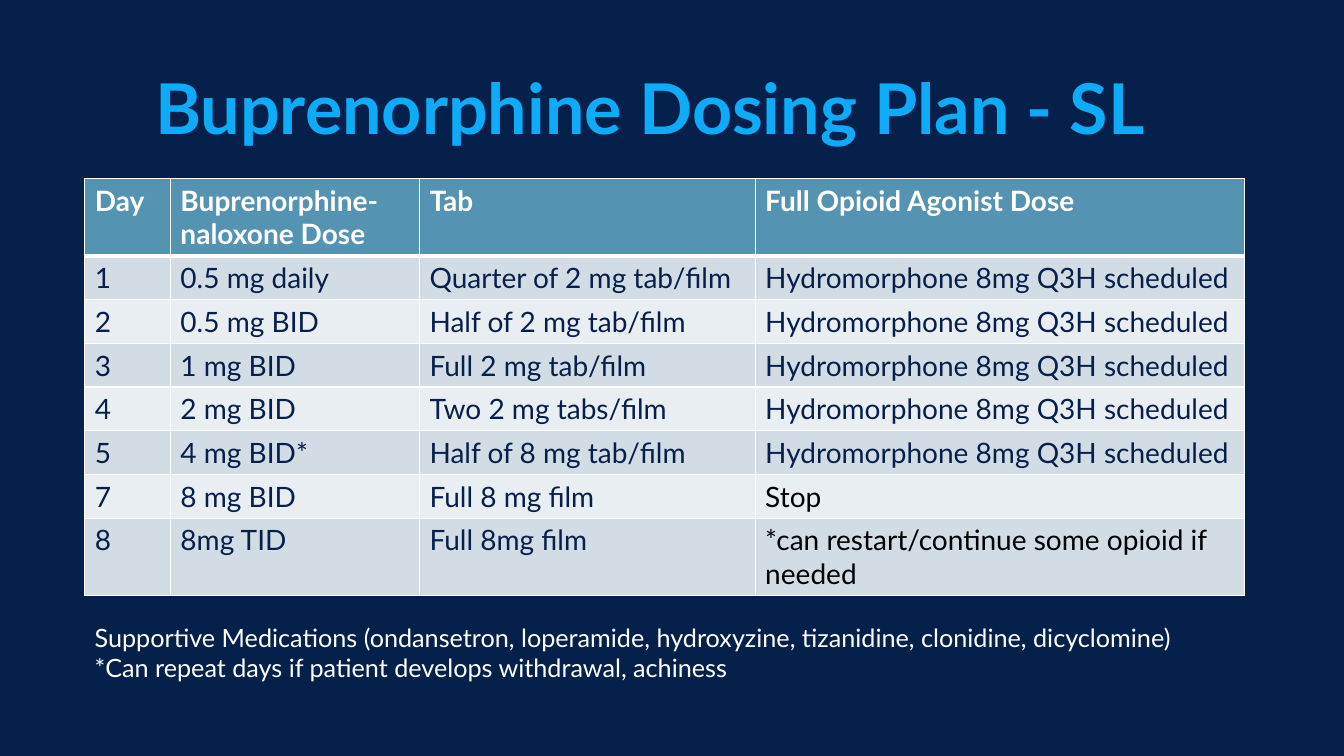
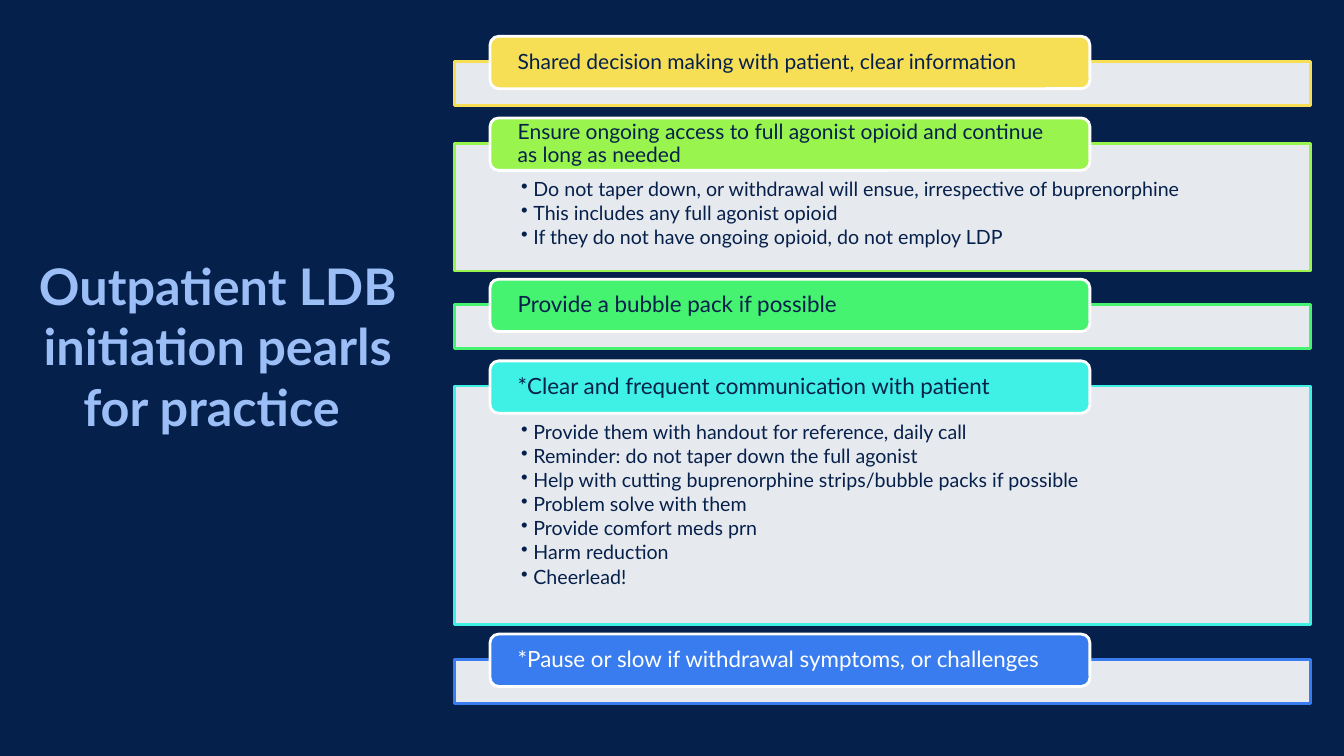
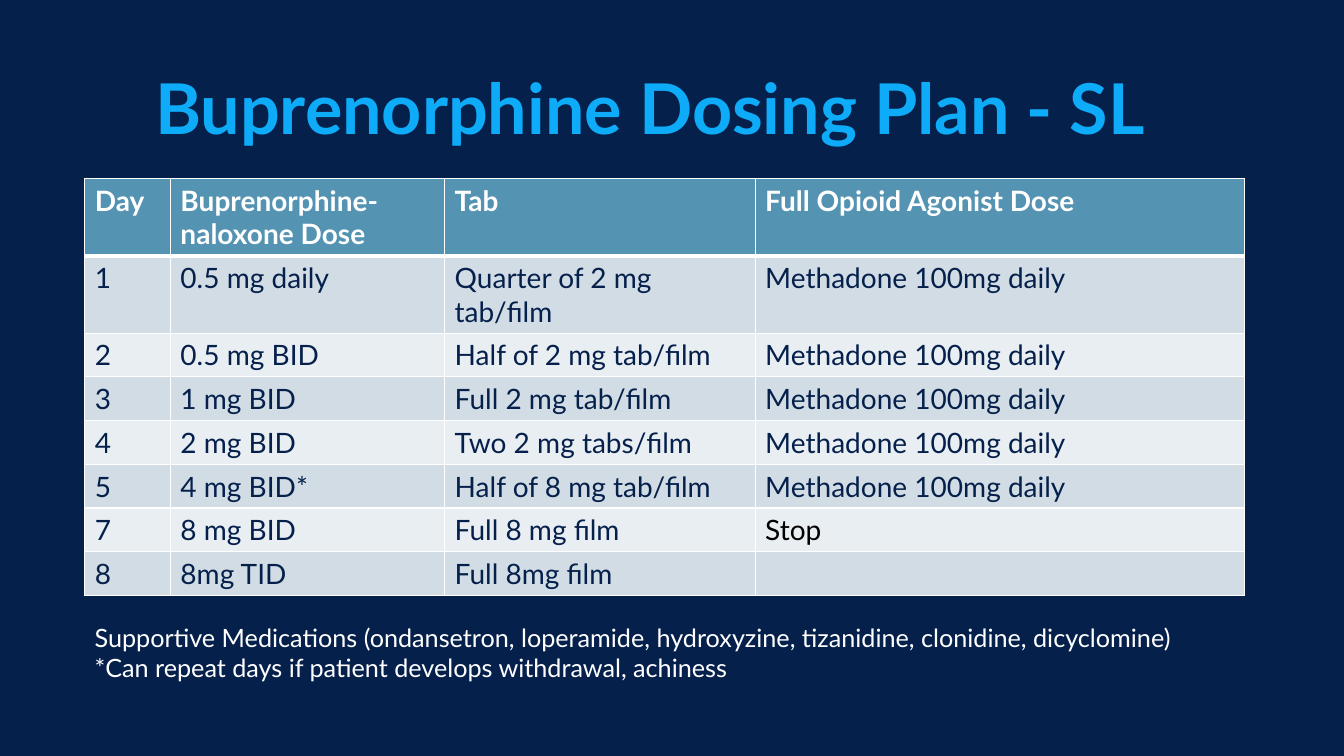
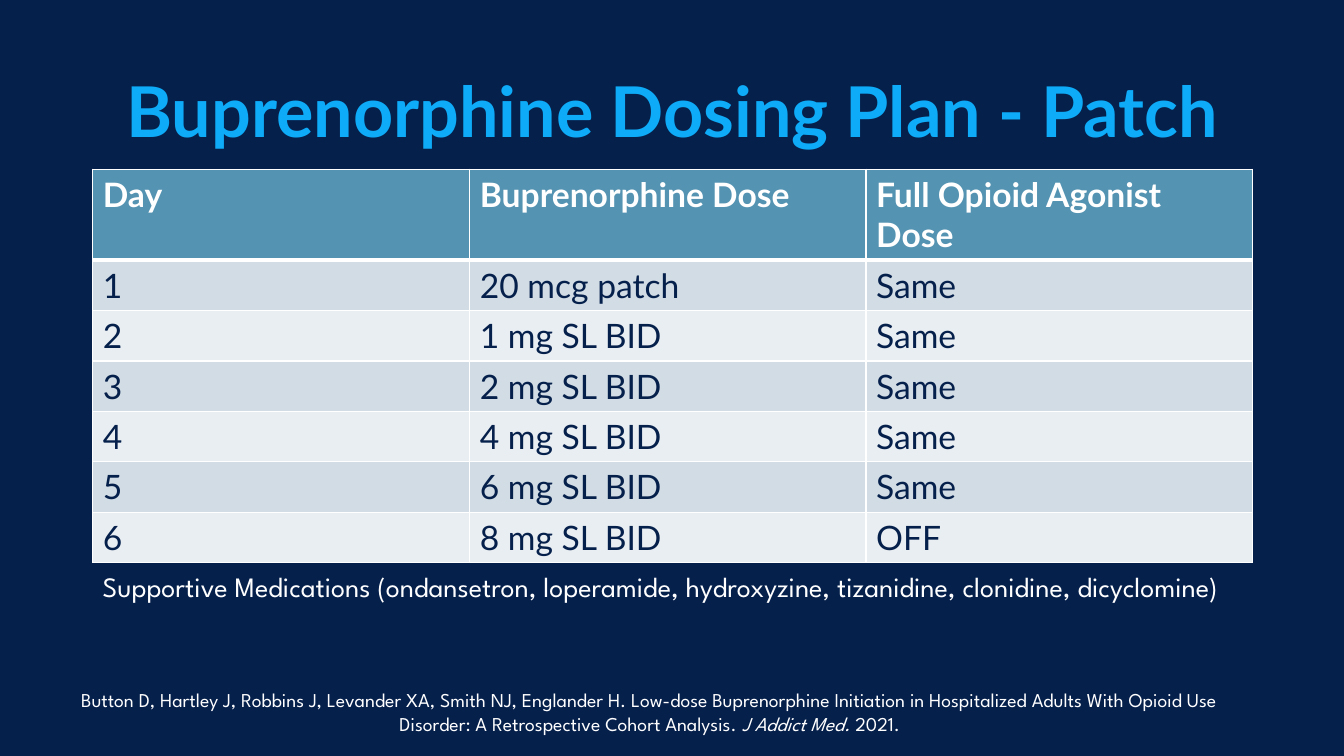
from lxml.etree import SubElement
from pptx import Presentation
from pptx.dml.color import RGBColor
from pptx.enum.shapes import MSO_SHAPE as Shape
from pptx.enum.text import MSO_ANCHOR as Anchor, PP_ALIGN as Align
from pptx.oxml import parse_xml
from pptx.oxml.ns import nsdecls, qn
from pptx.util import Emu, Pt

EMU_PER_PX = 9144  # 100 px to the inch

NAVY, WHITE, BLACK = "06204C", "FFFFFF", "000000"
SKY, PERIWINKLE = "0DABF8", "9CBEF7"
HEADER, BANDS = "5493B2", ("D1DCE4", "E9EEF2")
BODY_FONT, NOTE_FONT = "Lato", "League Spartan"


def px(length):
    return Emu(length * EMU_PER_PX)


def color(value):
    return RGBColor.from_string(value)


class Deck:
    """Holds the shared style and the current page."""

    def __init__(self):
        self.deck = Presentation()
        self.deck.slide_width, self.deck.slide_height = px(1333), px(750)
        self.page = None

    def new_page(self):
        self.page = self.deck.slides.add_slide(self.deck.slide_layouts[6])
        fill = self.page.background.fill
        fill.solid()
        fill.fore_color.rgb = color(NAVY)

    def add_span(self, para, text, size, ink=WHITE, font=BODY_FONT, bold=False, italic=False):
        span = para.add_run()
        span.text = text
        span.font.name, span.font.size = font, Pt(size)
        span.font.bold, span.font.italic = bold, italic
        span.font.color.rgb = color(ink)

    def set_frame(self, frame, insets, anchor=Anchor.TOP):
        frame.word_wrap = True
        frame.vertical_anchor = anchor
        (frame.margin_left, frame.margin_top,
         frame.margin_right, frame.margin_bottom) = map(px, insets)

    def text(self, at, paragraphs, size, insets=(10, 5, 10, 5), anchor=Anchor.TOP,
             align=Align.LEFT, **style):
        """Each paragraph is a list of (text, italic) spans."""
        frame = self.page.shapes.add_textbox(*map(px, at)).text_frame
        self.set_frame(frame, insets, anchor)
        for index, spans in enumerate(paragraphs):
            para = frame.add_paragraph() if index else frame.paragraphs[0]
            para.alignment = align
            for words, italic in spans:
                self.add_span(para, words, size, italic=italic, **style)

    def title(self, at, words, size=50, ink=SKY):
        self.text(at, [[(words, False)]], size, insets=(0, 1, 0, 1),
                  anchor=Anchor.MIDDLE, align=Align.CENTER, ink=ink, bold=True)

    def shape(self, kind, at, fill, line):
        box = self.page.shapes.add_shape(kind, *map(px, at))
        box.shadow.inherit = False
        box.fill.solid()
        box.fill.fore_color.rgb = color(fill)
        box.line.color.rgb = color(line)
        box.line.width = Pt(2)
        return box

    def bullets(self, frame, items):
        self.set_frame(frame, (66, 36, 66, 11))
        for index, item in enumerate(items):
            para = frame.add_paragraph() if index else frame.paragraphs[0]
            props = para._p.get_or_add_pPr()
            props.set("marL", str(px(12)))
            props.set("indent", str(-px(12)))
            SubElement(props, qn("a:buChar")).set("char", "•")
            para.alignment = Align.LEFT
            para.line_spacing, para.space_after = 0.9, Pt(2.1)
            self.add_span(para, item, 14, NAVY)

    def pearl(self, top, height, accent, label, size, items=(), ink=NAVY):
        """A pale panel with a coloured label over its top edge."""
        panel = self.shape(Shape.RECTANGLE, (451, top, 849, height), WHITE, accent)
        tint = panel.fill._xPr.find(qn("a:solidFill"))[0]
        SubElement(tint, qn("a:alpha")).set("val", "90000")
        self.bullets(panel.text_frame, items)
        tab = self.shape(Shape.ROUNDED_RECTANGLE, (486, top - 25, 595, 52), accent, WHITE)
        self.set_frame(tab.text_frame, (25, 0, 25, 0), Anchor.MIDDLE)
        para = tab.text_frame.paragraphs[0]
        para.alignment, para.line_spacing = Align.LEFT, 0.9
        self.add_span(para, label, size, ink)

    def borders(self, cell, top, bottom):
        props = cell._tc.get_or_add_tcPr()
        widths = {"lnL": 1, "lnR": 1, "lnT": top, "lnB": bottom}
        for place, (side, width) in enumerate(widths.items()):
            props.insert(place, parse_xml(
                f'<a:{side} {nsdecls("a")} w="{Pt(width)}"><a:solidFill>'
                f'<a:srgbClr val="{WHITE}"/></a:solidFill></a:{side}>'))

    def table(self, left, top, widths, rows, size, black=()):
        """The first row is the header; cells listed in black are set in black."""
        row_height = 41
        frame = self.page.shapes.add_table(
            len(rows), len(widths), px(left), px(top),
            px(sum(widths)), px(row_height * len(rows)))
        table = frame.table
        table.horz_banding = False
        for column, width in zip(table.columns, widths):
            column.width = px(width)
        for y, row in enumerate(rows):
            for x, words in enumerate(row):
                cell = table.cell(y, x)
                cell.fill.solid()
                cell.fill.fore_color.rgb = color(BANDS[(y - 1) % 2] if y else HEADER)
                self.borders(cell, 3 if y == 1 else 1, 1 if y else 3)
                ink = BLACK if words in black else NAVY if y else WHITE
                if words:
                    self.add_span(cell.text_frame.paragraphs[0], words, size, ink, bold=y == 0)


SUPPORT = ("Supportive Medications (ondansetron, loperamide, hydroxyzine, "
           "tizanidine, clonidine, dicyclomine)")
REPEAT = "*Can repeat days if patient develops withdrawal, achiness"
RESTART = "*can restart/continue some opioid if needed"

SL_HEADER = ("Day", "Buprenorphine-naloxone Dose", "Tab", "Full Opioid Agonist Dose")
SL_DOSES = [
    ("1", "0.5 mg daily", "Quarter of 2 mg tab/film"),
    ("2", "0.5 mg BID", "Half of 2 mg tab/film"),
    ("3", "1 mg BID", "Full 2 mg tab/film"),
    ("4", "2 mg BID", "Two 2 mg tabs/film"),
    ("5", "4 mg BID*", "Half of 8 mg tab/film"),
    ("7", "8 mg BID", "Full 8 mg film"),
    ("8", "8mg TID", "Full 8mg film"),
]

PATCH_DOSES = ["20 mcg patch"] + [f"{dose} mg SL BID" for dose in (1, 2, 4, 6, 8)]

PEARLS = [
    (61, 44, "F6DE55", "Shared decision making with patient, clear information", 15),
    (142, 127, "99F44E",
     "Ensure ongoing access to full agonist opioid and continue as long as needed", 15,
     ("Do not taper down, or withdrawal will ensue, irrespective of buprenorphine",
      "This includes any full agonist opioid",
      "If they do not have ongoing opioid, do not employ LDP")),
    (302, 44, "46F370", "Provide a bubble pack if possible", 16),
    (383, 237, "3FF1E5", "*Clear and frequent communication with patient", 16,
     ("Provide them with handout for reference, daily call",
      "Reminder: do not taper down the full agonist",
      "Help with cutting buprenorphine strips/bubble packs if possible",
      "Problem solve with them",
      "Provide comfort meds prn",
      "Harm reduction",
      "Cheerlead!")),
    (654, 44, "387CEF", "*Pause or slow if withdrawal symptoms, or challenges", 16, (), WHITE),
]


def sl_page(deck, widths, agonist, last):
    deck.new_page()
    deck.title((70, 55, 1150, 101), "Buprenorphine Dosing Plan - SL")
    agonists = [agonist] * 5 + ["Stop", last]
    rows = [SL_HEADER] + [(*dose, other) for dose, other in zip(SL_DOSES, agonists)]
    deck.table(84, 177, widths, rows, 20, black=("Stop", RESTART))
    deck.text((84, 612, 1121, 71), [[(SUPPORT, False)], [(REPEAT, False)]], 18)


def pearls_page(deck):
    deck.new_page()
    deck.title((8, 42, 416, 602), "Outpatient LDB initiation pearls for practice ", 36, PERIWINKLE)
    for pearl in PEARLS:
        deck.pearl(*pearl)


def patch_page(deck):
    deck.new_page()
    deck.title((67, 25, 1200, 167), "Buprenorphine Dosing Plan - Patch")
    rows = [("Day", "Buprenorphine Dose", "Full Opioid Agonist Dose")]
    for day, dose in enumerate(PATCH_DOSES, 1):
        rows.append((str(day), dose, "OFF" if day == len(PATCH_DOSES) else "Same"))
    deck.table(92, 168, (374, 393, 383), rows, 24)
    deck.text((92, 560, 1191, 44), [[(SUPPORT, False)]], 20, font=NOTE_FONT)
    # Reference
    deck.text((41, 678, 1207, 57), [[
        ("Button D, Hartley J, Robbins J, Levander XA, Smith NJ, Englander H. "
         "Low-dose Buprenorphine Initiation in Hospitalized Adults With Opioid Use "
         "Disorder: A Retrospective Cohort Analysis. ", False),
        ("J Addict Med. ", True),
        ("2021.", False),
    ]], 14, align=Align.CENTER, font=NOTE_FONT)


def main():
    deck = Deck()
    sl_page(deck, (85, 247, 333, 485), "Hydromorphone 8mg Q3H scheduled", RESTART)
    pearls_page(deck)
    sl_page(deck, (85, 272, 308, 485), "Methadone 100mg daily", "")
    patch_page(deck)
    deck.deck.save("out.pptx")


if __name__ == "__main__":
    main()
